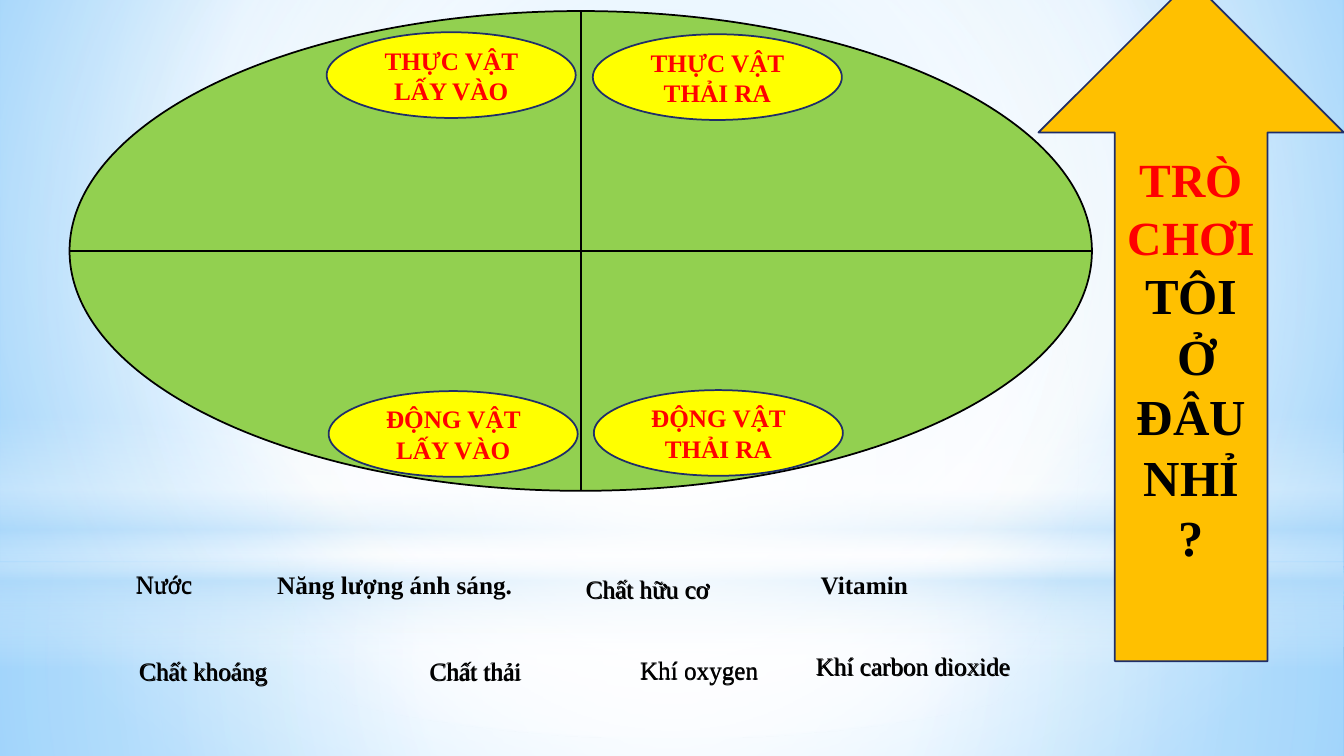
from dataclasses import dataclass

from lxml import etree
from pptx import Presentation
from pptx.dml.color import RGBColor
from pptx.enum.shapes import MSO_SHAPE
from pptx.enum.text import MSO_ANCHOR, MSO_AUTO_SIZE, PP_ALIGN
from pptx.oxml.ns import qn
from pptx.util import Pt

RECTANGLE, ELLIPSE = MSO_SHAPE.RECTANGLE, MSO_SHAPE.OVAL
QUARTERED_OVAL = MSO_SHAPE.FLOWCHART_OR
BADGE, ARROW = MSO_SHAPE.FLOWCHART_CONNECTOR, MSO_SHAPE.UP_ARROW
LEFT, CENTER, JUSTIFY = PP_ALIGN.LEFT, PP_ALIGN.CENTER, PP_ALIGN.JUSTIFY
MIDDLE = MSO_ANCHOR.MIDDLE
FIT_SHAPE = MSO_AUTO_SIZE.SHAPE_TO_FIT_TEXT

PX = 9144  # 100 px to the inch
SLIDE_SIZE = (1333, 750)


@dataclass(frozen=True)
class Theme:
    font: str = "Times New Roman"
    black: str = "000000"
    red: str = "FF0000"
    green: str = "92D050"
    yellow: str = "FFFF00"
    orange: str = "FFC000"
    outline: str = "1F2E69"
    white: str = "FFFFFF"
    haze: str = "B4DCFA"
    sky: str = "9ED5FF"
    deep_sky: str = "5BB9FF"
    body: int = 18
    game: int = 34
    question: int = 36
    line: float = 1.25


THEME = Theme()
MIDPOINT = (50, 50, 50, 50)

# Gradient stops: position %, colour, opacity %. A focus of None means top to bottom.
SKY_STOPS = [(0, THEME.sky, 100), (60, THEME.white, 100), (100, THEME.deep_sky, 100)]
SKY_FOCUS = (20, 10, 20, 60)
BACKDROP = [
    (RECTANGLE, (0, 558, 1333, 192), MIDPOINT,
     [(0, THEME.white, 91), (37, THEME.white, 76), (100, THEME.haze, 79)]),
    (RECTANGLE, (0, 0, 1333, 558), MIDPOINT,
     [(0, THEME.white, 89), (48, THEME.white, 62), (100, THEME.haze, 79)]),
    (RECTANGLE, (0, 412, 1333, 250), None,
     [(0, THEME.white, 0), (29, THEME.white, 30), (45, THEME.haze, 40),
      (55, THEME.white, 26), (65, THEME.haze, 60), (100, THEME.white, 0)]),
    (ELLIPSE, (0, 175, 1333, 558), MIDPOINT,
     [(0, THEME.white, 100), (56, THEME.white, 0)]),
]

BOARD = (69, 11, 1014, 476)
BADGE_SIZE = (247, 85)
BADGES = [
    ("THỰC VẬT LẤY VÀO", (324, 32)),
    ("THỰC VẬT THẢI RA", (588, 34)),
    ("ĐỘNG VẬT LẤY VÀO", (326, 388)),
    ("ĐỘNG VẬT THẢI RA", (589, 387)),
]

# Answer cards: text, width, bold, alignment, corner of each stacked card.
CARD_HEIGHT = 40
CARDS = [
    ("Nước", 79, False, LEFT, [(125, 559), (125, 560)]),
    ("Năng lượng ánh sáng.", 255, True, JUSTIFY, [(265, 560)]),
    ("Chất hữu cơ", 144, False, LEFT, [(572, 565), (571, 564)]),
    ("Vitamin", 108, True, LEFT, [(804, 560)]),
    ("Chất khoáng", 149, False, LEFT, [(129, 646), (128, 645)]),
    ("Chất thải", 112, False, LEFT, [(416, 646), (417, 645)]),
    ("Khí oxygen", 143, False, LEFT, [(625, 645), (625, 644)]),
    ("Khí carbon dioxide", 215, False, LEFT, [(799, 640), (800, 641)]),
]

ARROW_BOX = (1030, -20, 303, 676)
ARROW_LINES = [
    ("TRÒ CHƠI", THEME.game, THEME.red),
    ("TÔI", THEME.question, THEME.black),
    (" Ở ĐÂU NHỈ", THEME.question, THEME.black),
    ("?", THEME.question, THEME.black),
]


def emu(box):
    return [length * PX for length in box]


def set_gradient(parent, stops, focus):
    """Replace the solid fill inside parent with a gradient."""
    gradient = etree.Element(qn("a:gradFill"), rotWithShape="1")
    stop_list = etree.SubElement(gradient, qn("a:gsLst"))
    for position, color, opacity in stops:
        stop = etree.SubElement(stop_list, qn("a:gs"), pos=str(position * 1000))
        shade = etree.SubElement(stop, qn("a:srgbClr"), val=color)
        if opacity < 100:
            etree.SubElement(shade, qn("a:alpha"), val=str(opacity * 1000))
    if focus:
        path = etree.SubElement(gradient, qn("a:path"), path="circle")
        sides = {side: str(share * 1000) for side, share in zip("ltrb", focus)}
        etree.SubElement(path, qn("a:fillToRect"), **sides)
    else:
        etree.SubElement(gradient, qn("a:lin"), ang="5400000", scaled="0")
    parent.replace(parent.find(qn("a:solidFill")), gradient)


def add_solid(page, kind, box, color, line_color=None):
    shape = page.shapes.add_shape(kind, *emu(box))
    shape.shadow.inherit = False
    shape.fill.solid()
    shape.fill.fore_color.rgb = RGBColor.from_string(color)
    if line_color:
        shape.line.color.rgb = RGBColor.from_string(line_color)
        shape.line.width = Pt(THEME.line)
    else:
        shape.line.fill.background()
    return shape


def write(frame, lines, bold, alignment):
    """Fill a text frame with (text, size, colour) paragraphs."""
    for index, (text, size, color) in enumerate(lines):
        para = frame.add_paragraph() if index else frame.paragraphs[0]
        para.text = text
        para.alignment = alignment
        para.font.name = THEME.font
        para.font.size = Pt(size)
        para.font.bold = bold
        para.font.color.rgb = RGBColor.from_string(color)


def add_titled_shape(page, kind, box, color, lines):
    shape = add_solid(page, kind, box, color, THEME.outline)
    shape.text_frame.word_wrap = True
    shape.text_frame.vertical_anchor = MIDDLE
    write(shape.text_frame, lines, True, CENTER)


def add_backdrop(page):
    page.background.fill.solid()
    page.background.fill.fore_color.rgb = RGBColor.from_string(THEME.sky)
    set_gradient(page.element.find(".//" + qn("p:bgPr")), SKY_STOPS, SKY_FOCUS)
    for kind, box, focus, stops in BACKDROP:
        shape = add_solid(page, kind, box, THEME.white)
        set_gradient(shape.element.spPr, stops, focus)


def add_card(page, text, box, bold, alignment):
    frame = page.shapes.add_textbox(*emu(box)).text_frame
    frame.word_wrap = False
    frame.auto_size = FIT_SHAPE
    write(frame, [(text, THEME.body, THEME.black)], bold, alignment)


def main():
    deck = Presentation()
    deck.slide_width, deck.slide_height = emu(SLIDE_SIZE)
    page = deck.slides.add_slide(deck.slide_layouts[6])

    add_backdrop(page)
    add_solid(page, QUARTERED_OVAL, BOARD, THEME.green, THEME.black)
    for text, corner in BADGES:
        add_titled_shape(page, BADGE, corner + BADGE_SIZE, THEME.yellow,
                         [(text, THEME.body, THEME.red)])
    for text, width, bold, alignment, corners in CARDS:
        for corner in corners:
            add_card(page, text, corner + (width, CARD_HEIGHT), bold, alignment)
    add_titled_shape(page, ARROW, ARROW_BOX, THEME.orange, ARROW_LINES)

    deck.save("out.pptx")


if __name__ == "__main__":
    main()
